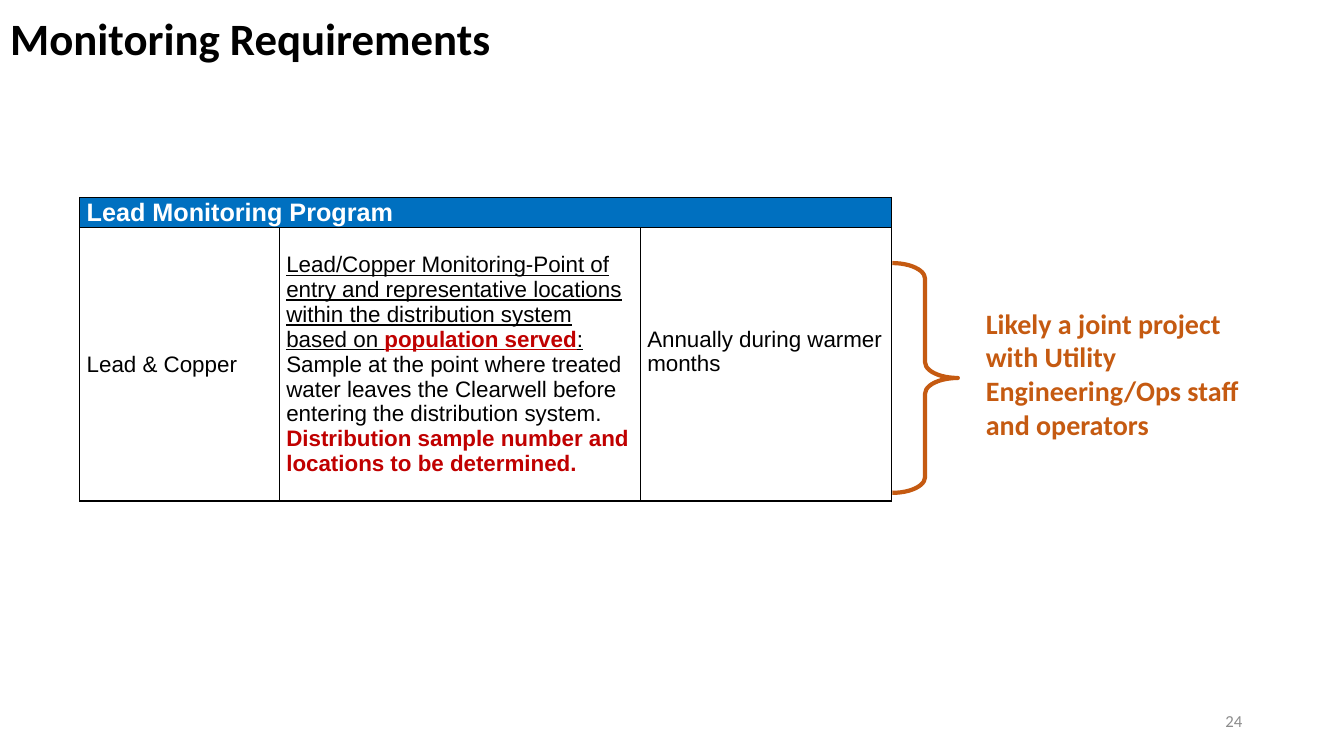
from dataclasses import dataclass

from lxml.etree import SubElement
from pptx import Presentation
from pptx.dml.color import RGBColor
from pptx.enum.shapes import MSO_SHAPE
from pptx.enum.text import MSO_ANCHOR, MSO_AUTO_SIZE, PP_ALIGN
from pptx.oxml.ns import qn
from pptx.util import Inches, Pt


@dataclass(frozen=True)
class Theme:
    heading_font: str = "Calibri"
    table_font: str = "Arial"
    black: str = "000000"
    white: str = "FFFFFF"
    blue: str = "0070C0"
    red: str = "C00000"
    orange: str = "C55A11"
    gray: str = "8C8C8C"
    title_size: int = 32
    note_size: int = 20
    header_size: int = 18
    body_size: int = 16
    number_size: int = 12


@dataclass(frozen=True)
class Span:
    text: str
    underline: bool = False
    alert: bool = False


@dataclass(frozen=True)
class Entry:
    paras: tuple[tuple[Span, ...], ...]
    bottom: float = 0


THEME = Theme()
COLUMN_WIDTHS = (1.98, 3.58, 2.49)
ROW_HEIGHTS = (0.28, 2.71)
ENTRIES = (
    Entry(((Span("Lead & Copper"),),)),
    Entry((
        (
            Span("Lead/Copper Monitoring-Point of entry and representative locations "
                 "within the distribution system based on ", underline=True),
            Span("population served", underline=True, alert=True),
            Span(":", underline=True),
        ),
        (
            Span("Sample at the point where treated water leaves the Clearwell "
                 "before entering the distribution system. "),
            Span("Distribution sample number and locations to be determined.", alert=True),
        ),
    )),
    Entry(((Span("Annually during warmer months"),),), bottom=0.25),
)


def style(para, font: str, size: int, color: str, bold: bool = False) -> None:
    para.font.name = font
    para.font.size = Pt(size)
    para.font.bold = bold
    para.font.color.rgb = RGBColor.from_string(color)


def add_text(page, area: tuple[float, ...], text: str, size: int, color: str,
             bold: bool = False, align=PP_ALIGN.LEFT, anchor=MSO_ANCHOR.TOP) -> None:
    box = page.shapes.add_textbox(*map(Inches, area))
    frame = box.text_frame
    frame.word_wrap = True
    frame.vertical_anchor = anchor
    para = frame.paragraphs[0]
    para.text = text
    para.alignment = align
    style(para, THEME.heading_font, size, color, bold)


def format_cell(cell, fill: str, bottom: float = 0) -> None:
    cell.margin_left = cell.margin_right = Inches(0.07)
    cell.margin_top = 0
    cell.margin_bottom = Inches(bottom)
    cell.vertical_anchor = MSO_ANCHOR.MIDDLE
    properties = cell._tc.get_or_add_tcPr()
    for side in ("a:lnL", "a:lnR", "a:lnT", "a:lnB"):
        border = SubElement(properties, qn(side), w=str(Pt(1)))
        solid = SubElement(border, qn("a:solidFill"))
        SubElement(solid, qn("a:srgbClr"), val=THEME.black)
    cell.fill.solid()
    cell.fill.fore_color.rgb = RGBColor.from_string(fill)


def fill_entry(cell, entry: Entry) -> None:
    format_cell(cell, THEME.white, entry.bottom)
    frame = cell.text_frame
    for index, spans in enumerate(entry.paras):
        para = frame.add_paragraph() if index else frame.paragraphs[0]
        style(para, THEME.table_font, THEME.body_size, THEME.black)
        for span in spans:
            run = para.add_run()
            run.text = span.text
            run.font.underline = span.underline
            if span.alert:
                run.font.bold = True
                run.font.color.rgb = RGBColor.from_string(THEME.red)


def add_title(page) -> None:
    title = page.shapes.title
    title.left, title.top, title.width, title.height = map(Inches, (0, 0, 11.5, 0.82))
    frame = title.text_frame
    frame.text = "Monitoring Requirements"
    frame.auto_size = MSO_AUTO_SIZE.NONE
    frame.vertical_anchor = MSO_ANCHOR.MIDDLE
    para = frame.paragraphs[0]
    para.alignment = PP_ALIGN.LEFT
    para.line_spacing = 0.9
    style(para, THEME.heading_font, THEME.title_size, THEME.black, bold=True)


def add_program_table(page) -> None:
    area = (0.79, 1.96, sum(COLUMN_WIDTHS), sum(ROW_HEIGHTS))
    table = page.shapes.add_table(
        len(ROW_HEIGHTS), len(COLUMN_WIDTHS), *map(Inches, area)).table
    for column, width in zip(table.columns, COLUMN_WIDTHS):
        column.width = Inches(width)
    for row, height in zip(table.rows, ROW_HEIGHTS):
        row.height = Inches(height)
    for cell in table.rows[0].cells:
        format_cell(cell, THEME.blue)
        style(cell.text_frame.paragraphs[0], THEME.table_font,
              THEME.header_size, THEME.white, bold=True)
    header = table.cell(0, 0)
    header.merge(table.cell(0, len(COLUMN_WIDTHS) - 1))
    header.text_frame.paragraphs[0].add_run().text = "Lead Monitoring Program"
    for cell, entry in zip(table.rows[1].cells, ENTRIES):
        fill_entry(cell, entry)


def add_brace(page) -> None:
    area = (8.85, 2.61, 0.65, 2.28)
    brace = page.shapes.add_shape(MSO_SHAPE.RIGHT_BRACE, *map(Inches, area))
    brace.adjustments[0] = 0.24
    brace.adjustments[1] = 0.5
    brace.shadow.inherit = False
    brace.fill.background()
    brace.line.color.rgb = RGBColor.from_string(THEME.orange)
    brace.line.width = Pt(3)


def main() -> None:
    deck = Presentation()
    deck.slide_width = Inches(13.33)
    deck.slide_height = Inches(7.5)
    page = deck.slides.add_slide(deck.slide_layouts.get_by_name("Title Only"))
    add_title(page)
    add_text(page, (9.42, 6.95, 3, 0.4), "24", THEME.number_size, THEME.gray,
             align=PP_ALIGN.RIGHT, anchor=MSO_ANCHOR.MIDDLE)
    add_program_table(page)
    add_brace(page)
    add_text(page, (9.68, 2.99, 3, 1.45),
             "Likely a joint project with Utility Engineering/Ops staff and operators",
             THEME.note_size, THEME.orange, bold=True)
    deck.save("out.pptx")


if __name__ == "__main__":
    main()
